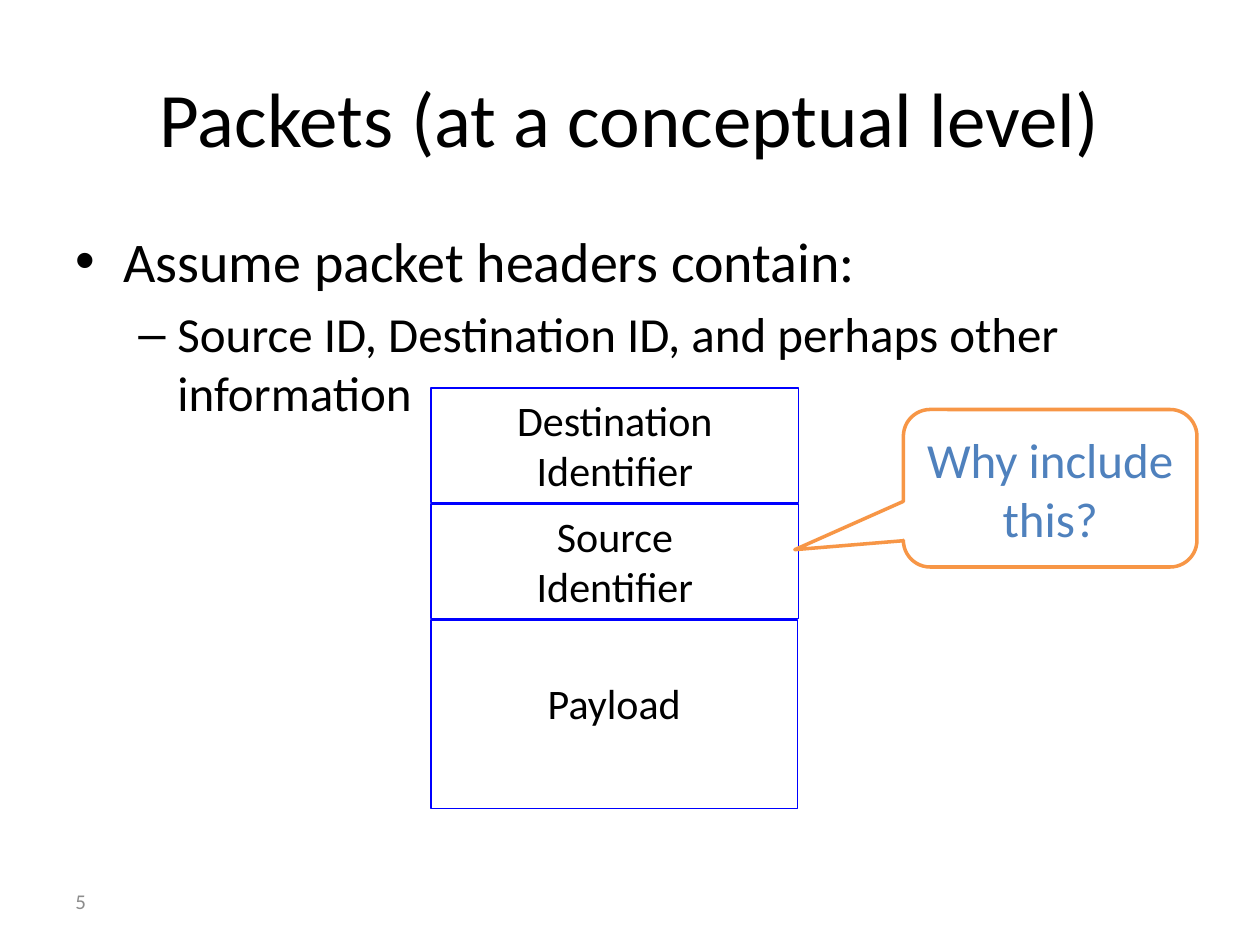
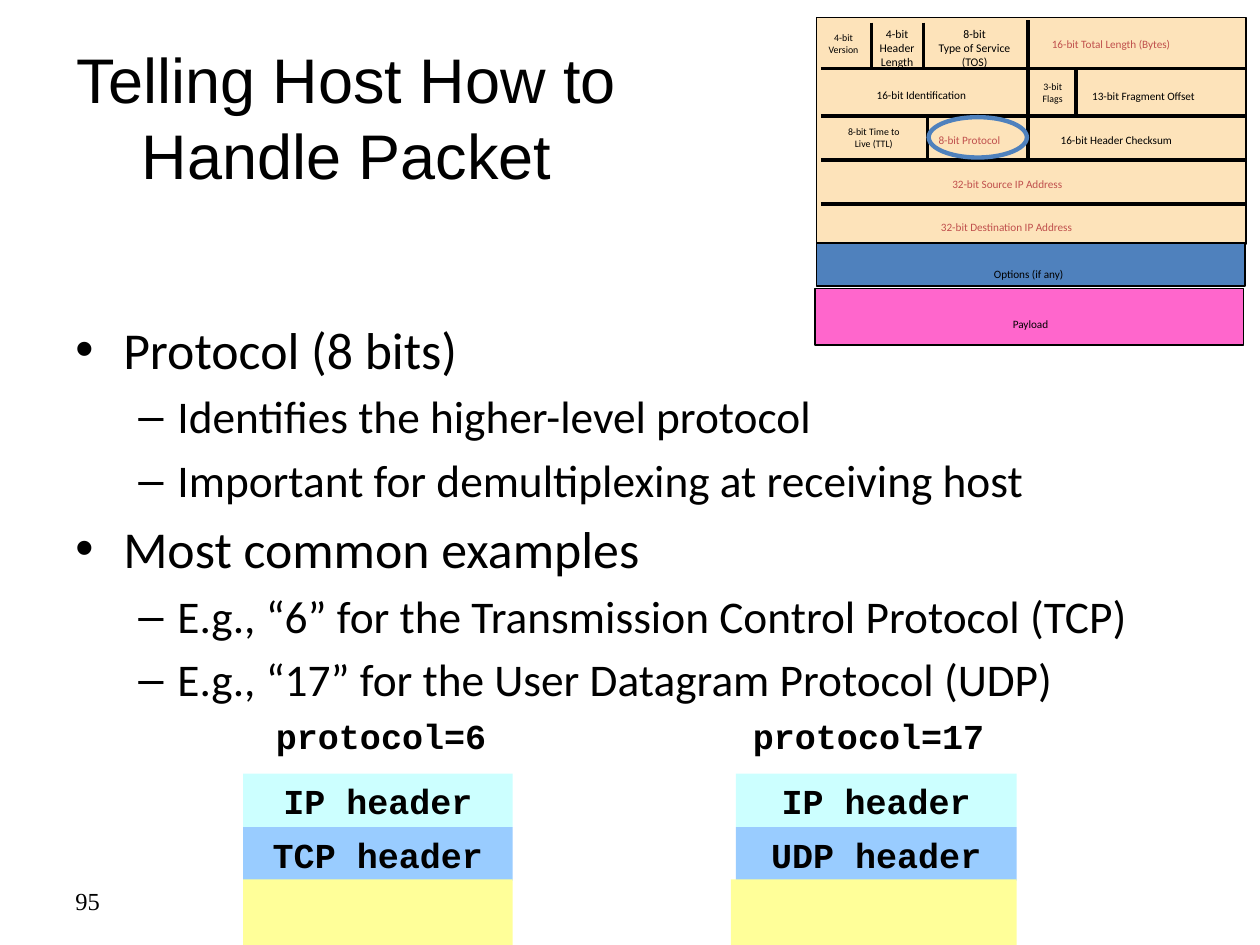
from lxml import etree
from pptx import Presentation
from pptx.dml.color import RGBColor
from pptx.enum.shapes import MSO_CONNECTOR, MSO_SHAPE
from pptx.enum.text import MSO_ANCHOR as Anchor, MSO_AUTO_SIZE as AutoSize, PP_ALIGN as Align
from pptx.oxml.ns import qn
from pptx.util import Inches, Pt

BLACK = RGBColor(0x00, 0x00, 0x00)
WHITE = RGBColor(0xFF, 0xFF, 0xFF)
GRAY = RGBColor(0x8C, 0x8C, 0x8C)
BLUE = RGBColor(0x00, 0x00, 0xFF)
STEEL = RGBColor(0x4F, 0x81, 0xBD)
ORANGE = RGBColor(0xF7, 0x96, 0x46)
RED = RGBColor(0xC0, 0x50, 0x4D)
CREAM = RGBColor(0xFD, 0xE3, 0xBA)
PINK = RGBColor(0xFF, 0x66, 0xCC)
CYAN = RGBColor(0xCC, 0xFF, 0xFF)
SKY = RGBColor(0x99, 0xCC, 0xFF)
YELLOW = RGBColor(0xFF, 0xFF, 0x99)

WIDTH, HEIGHT = Inches(10), Inches(7.5)
COLUMNS, ROWS = 100, 75
TITLE_ONLY = 5
MONO = {"name": "Courier New", "size": Pt(20), "bold": True}
BULLETS = [("•", 0.38, 0.38), ("–", 0.81, 0.31)]


class Deck:
    def __init__(self):
        self.presentation = Presentation()
        self.presentation.slide_width = WIDTH
        self.presentation.slide_height = HEIGHT
        self.slide = None

    def place(self, *box):
        units = (WIDTH / COLUMNS, HEIGHT / ROWS) * 2
        return [round(value * unit) for value, unit in zip(box, units)]

    def start(self, title, width, font, number, number_font, number_color):
        layout = self.presentation.slide_layouts[TITLE_ONLY]
        self.slide = self.presentation.slides.add_slide(layout)
        shape = self.slide.shapes.title
        shape.left, shape.top, shape.width, shape.height = self.place(5, 3, width, 12.5)
        self.label(shape, [title], font, anchor=Anchor.MIDDLE)
        self.text((5, 69.5, 23.3, 4), [number], number_font, number_color,
                  align=Align.LEFT, anchor=Anchor.MIDDLE)

    def label(self, shape, lines, font, color=BLACK, align=Align.CENTER,
              anchor=Anchor.TOP, wrap=True, top_inset=0.05):
        frame = shape.text_frame
        frame_format = {"word_wrap": wrap, "vertical_anchor": anchor,
                        "auto_size": AutoSize.NONE, "margin_top": Inches(top_inset)}
        for name, value in frame_format.items():
            setattr(frame, name, value)
        for index, line in enumerate(lines):
            paragraph = frame.add_paragraph() if index else frame.paragraphs[0]
            paragraph.alignment = align
            run = paragraph.add_run()
            run.text = line
            for name, value in ({"name": "Calibri"} | font).items():
                setattr(run.font, name, value)
            run.font.color.rgb = color

    def text(self, box, lines, font, color=BLACK, **format_values):
        shape = self.slide.shapes.add_textbox(*self.place(*box))
        self.label(shape, lines, font, color, **format_values)
        return shape

    def bullets(self, box, items, sizes):
        shape = self.text(box, [line for _, line in items], {}, align=Align.LEFT)
        for index, (level, _) in enumerate(items):
            paragraph = shape.text_frame.paragraphs[index]
            mark, margin, hanging = BULLETS[level]
            paragraph.runs[0].font.size = Pt(sizes[level])
            paragraph.space_before = Pt(0.2 * sizes[level] if index else 0)
            properties = paragraph._p.get_or_add_pPr()
            properties.set("marL", str(Inches(margin)))
            properties.set("indent", str(-Inches(hanging)))
            etree.SubElement(properties, qn("a:buFont")).set("typeface", "Arial")
            etree.SubElement(properties, qn("a:buChar")).set("char", mark)

    def shape(self, box, fill=None, line=None, weight=1, kind=MSO_SHAPE.RECTANGLE):
        shape = self.slide.shapes.add_shape(kind, *self.place(*box))
        shape.shadow.inherit = False
        if fill is None:
            shape.fill.background()
        else:
            shape.fill.solid()
            shape.fill.fore_color.rgb = fill
        if line is None:
            shape.line.fill.background()
        else:
            shape.line.color.rgb = line
            shape.line.width = Pt(weight)
        return shape

    def rule(self, start, end):
        connector = self.slide.shapes.add_connector(
            MSO_CONNECTOR.STRAIGHT, *self.place(*start, *end))
        connector.line.color.rgb = BLACK
        connector.line.width = Pt(2)
        etree.SubElement(connector._element.spPr, qn("a:effectLst"))


def packet_slide(deck):
    deck.start("Packets (at a conceptual level)", 90, {"size": Pt(44)},
               "5", {"size": Pt(12)}, GRAY)
    deck.bullets((5, 17.5, 90, 49.5), [
        (0, "Assume packet headers contain:"),
        (1, "Source ID, Destination ID, and perhaps other information"),
    ], (32, 28))
    fields = [
        (30.8, 29.2, 9.1, ["Destination", "Identifier"], 0.05),
        (40, 29.2, 9.1, ["Source", "Identifier"], 0.05),
        (49.2, 29.1, 15, ["Payload"], 0.46),
    ]
    for top, width, height, lines, inset in fields:
        field = deck.shape((34.2, top, width, height), line=BLUE, weight=0.75)
        deck.label(field, lines, {"size": Pt(24)}, top_inset=inset)
    callout = deck.shape((71.7, 32.5, 23.3, 12.5), WHITE, ORANGE, 2,
                         MSO_SHAPE.ROUNDED_RECTANGULAR_CALLOUT)
    for index, value in enumerate((-0.87, 0.39, 0.17)):
        callout.adjustments[index] = value
    deck.label(callout, ["Why include", "this?"], {"size": Pt(28)}, STEEL,
               anchor=Anchor.MIDDLE, wrap=False)


def protocol_stacks(deck):
    stacks = [
        ("protocol=6", "TCP header", 19.3, 21.4, 19.3, 30.25),
        ("protocol=17", "UDP header", 58.4, 22.3, 58, 68.95),
    ]
    layer_height = 4.25
    for caption, transport, left, width, data_left, center in stacks:
        for layer, (label, fill) in enumerate([("IP header", CYAN), (transport, SKY)]):
            box = deck.shape((left, 61.4 + layer * layer_height, width, layer_height), fill)
            deck.label(box, [label], MONO)
        deck.shape((data_left, 69.8, left + width - data_left, 13), YELLOW)
        deck.text((center - 10, 56.2, 20, layer_height), [caption], MONO, wrap=False)


def header_diagram(deck):
    for box, fill in [((64.8, 1.4, 34.1, 18), CREAM),
                      ((64.8, 19.3, 34, 3.4), STEEL),
                      ((64.7, 22.9, 34, 4.5), PINK)]:
        deck.shape(box, fill, BLACK)
    for row in (5.45, 9.2, 12.7, 16.2):
        deck.rule((65.15, row), (99, row))
    for column, top, bottom in [(81.6, 1.6, 12.6), (73.3, 1.8, 5.3), (69.15, 1.8, 5.3),
                                (85.4, 5.5, 9.1), (73.6, 9.3, 12.6)]:
        deck.rule((column, top), (column, bottom))
    stacked_labels = [
        ((64.6, 2, 4.7, 2.8), 5.6, ["4-bit", "Version"]),
        ((69, 1.6, 4.4, 3.9), 6.7, ["4-bit", "Header", "Length"]),
        ((73.1, 1.6, 8.5, 3.9), 6.7, ["8-bit", "Type of Service", "(TOS)"]),
        ((81.7, 5.9, 3.7, 2.8), 5.6, ["3-bit", "Flags"]),
        ((65.7, 9.5, 7.3, 2.8), 5.6, ["8-bit Time to", "Live (TTL)"]),
    ]
    for box, size, lines in stacked_labels:
        deck.text(box, lines, {"size": Pt(size)}, wrap=False)
    labels = [
        (82.5, 2.5, 15.6, "16-bit Total Length (Bytes)", RED),
        (68.6, 6.5, 10.7, "16-bit Identification", BLACK),
        (85.7, 6.6, 12.6, "13-bit Fragment Offset", BLACK),
        (73.5, 10.1, 8.5, "8-bit Protocol", RED),
        (83.2, 10.1, 13.8, "16-bit Header Checksum", BLACK),
        (74.6, 13.6, 14.7, "32-bit Source IP Address", RED),
        (73.7, 17, 17, "32-bit Destination IP Address", RED),
        (77.9, 20.7, 8.8, "Options (if any)", BLACK),
        (79.4, 24.7, 5.2, "Payload", BLACK),
    ]
    for left, top, width, label, color in labels:
        deck.text((left, top, width, 1.8), [label], {"size": Pt(6.4)}, color, align=Align.LEFT)
    deck.shape((73.7, 9.3, 7.8, 3.2), line=STEEL, weight=2.5, kind=MSO_SHAPE.OVAL)


def protocol_slide(deck):
    deck.start("Telling Host How to Handle Packet", 45, {"name": "Arial", "size": Pt(36)},
               "95", {"name": "Times New Roman", "size": Pt(14)}, BLACK)
    deck.bullets((5, 24.7, 92.5, 31.3), [
        (0, "Protocol (8 bits)"),
        (1, "Identifies the higher-level protocol"),
        (1, "Important for demultiplexing at receiving host"),
        (0, "Most common examples"),
        (1, "E.g., “6” for the Transmission Control Protocol (TCP)"),
        (1, "E.g., “17” for the User Datagram Protocol (UDP)"),
    ], (29.6, 25.9))
    protocol_stacks(deck)
    header_diagram(deck)


def main():
    deck = Deck()
    packet_slide(deck)
    protocol_slide(deck)
    deck.presentation.save("out.pptx")


if __name__ == "__main__":
    main()
